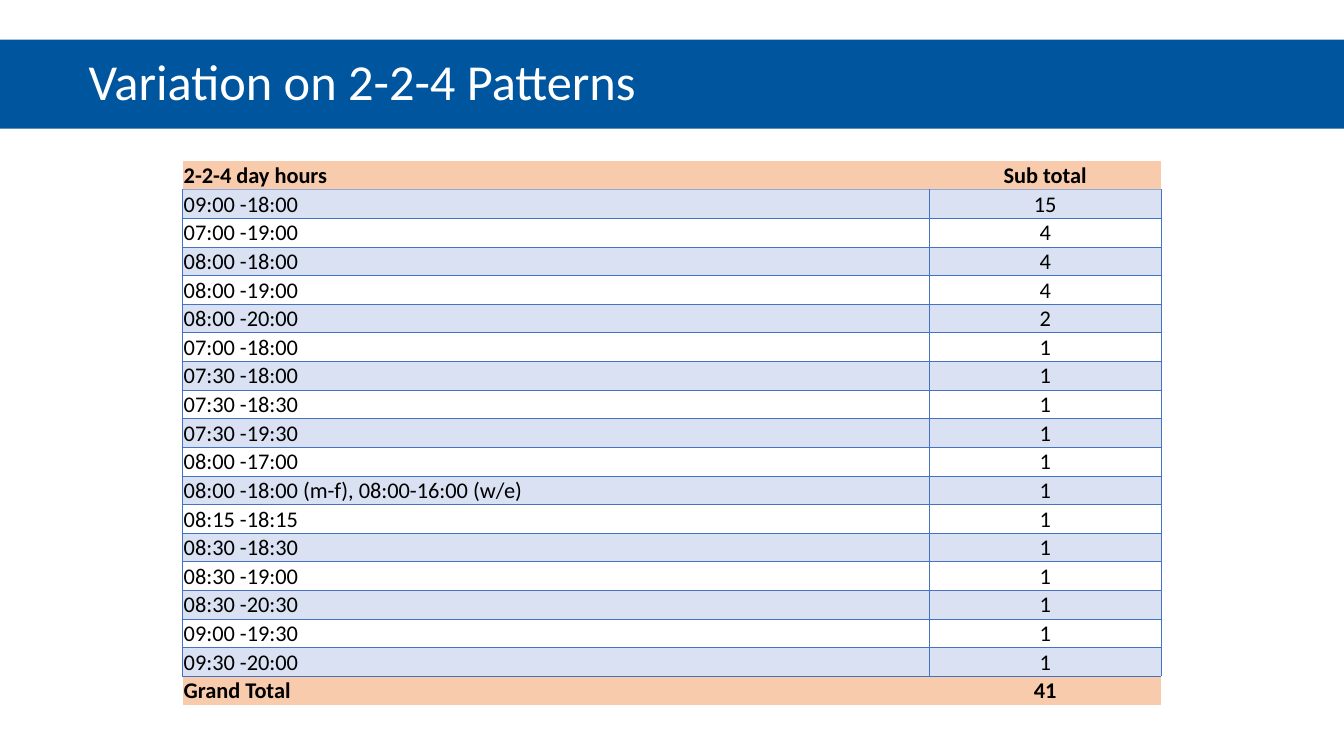
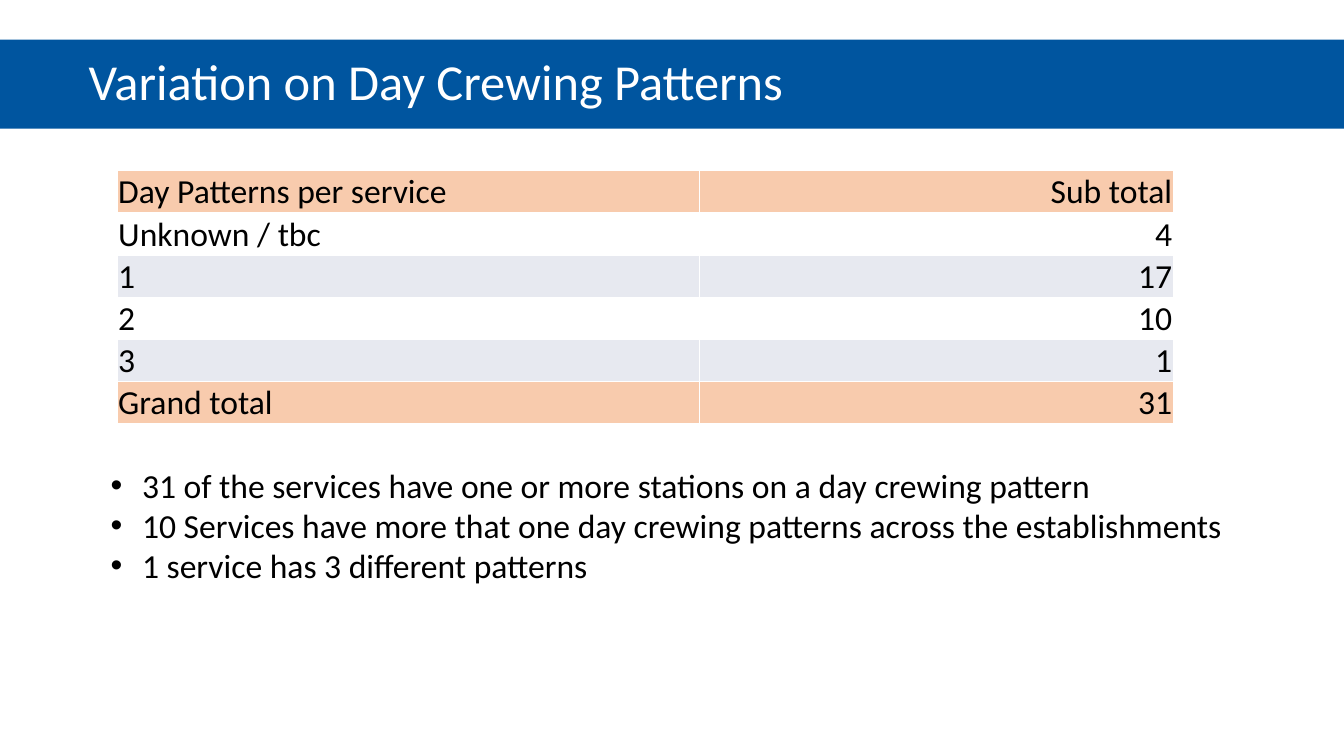
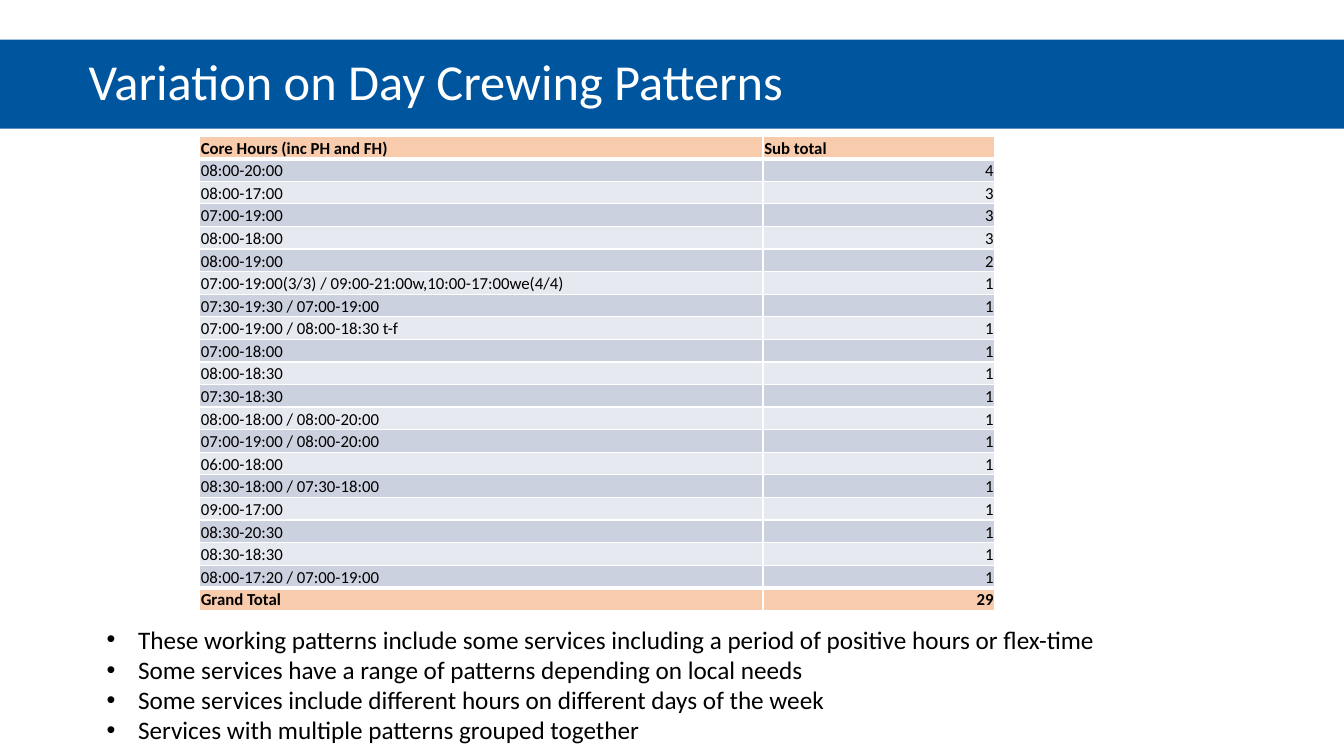
from lxml.etree import SubElement
from pptx import Presentation
from pptx.dml.color import RGBColor
from pptx.enum.text import MSO_ANCHOR as Anchor, MSO_AUTO_SIZE as AutoSize, PP_ALIGN as Align
from pptx.oxml.ns import qn
from pptx.util import Cm, Pt

# Shared look
FONT = "Calibri"
BLACK, WHITE, TITLE_BLUE, PEACH = "000000", "FFFFFF", "00559F", "F8CBAD"
PALE_BLUE, PALE_GREY, MID_GREY = "D9E1F2", "E7E9F0", "CCD1DF"
BLUE_LINE, SOFT_BLUE_LINE = ("4472C4", 0.5), ("8EA9DB", 0.5)
WHITE_LINE, THICK_WHITE_LINE = (WHITE, 1), (WHITE, 3)
SLIDE_WIDTH, SLIDE_HEIGHT = 33.87, 19.05
BULLET_INDENT = 0.79

# Content: the first row of each table is the header, the last the total
SLIDES = [
    {
        "title": "Variation on 2-2-4 Patterns",
        "table": {
            "rows": [
                ("2-2-4 day hours", "Sub total"),
                ("09:00 -18:00", 15),
                ("07:00 -19:00", 4),
                ("08:00 -18:00", 4),
                ("08:00 -19:00", 4),
                ("08:00 -20:00", 2),
                ("07:00 -18:00", 1),
                ("07:30 -18:00", 1),
                ("07:30 -18:30", 1),
                ("07:30 -19:30", 1),
                ("08:00 -17:00", 1),
                ("08:00 -18:00 (m-f), 08:00-16:00 (w/e)", 1),
                ("08:15 -18:15", 1),
                ("08:30 -18:30", 1),
                ("08:30 -19:00", 1),
                ("08:30 -20:30", 1),
                ("09:00 -19:30", 1),
                ("09:30 -20:00", 1),
                ("Grand Total", 41),
            ],
            "left": 4.6, "top": 4.06, "widths": (18.82, 5.84), "row_height": 0.69,
            "size": 16, "bold_ends": True, "bands": (PALE_BLUE, None),
            "header_align": Align.CENTER, "value_align": Align.CENTER,
            "grid": BLUE_LINE, "end_edge": None,
            "header_rule": SOFT_BLUE_LINE, "total_rule": BLUE_LINE,
        },
    },
    {
        "title": "Variation on Day Crewing Patterns",
        "table": {
            "rows": [
                ("Day Patterns per service", "Sub total"),
                ("Unknown / tbc", 4),
                ("1", 17),
                ("2", 10),
                ("3", 1),
                ("Grand total", 31),
            ],
            "left": 2.95, "top": 4.3, "widths": (14.68, 11.94), "row_height": 1.03,
            "size": 24, "bold_ends": False, "bands": (None, PALE_GREY),
            "header_align": Align.RIGHT, "value_align": Align.RIGHT,
            "grid": WHITE_LINE, "end_edge": WHITE_LINE,
            "header_rule": WHITE_LINE, "total_rule": WHITE_LINE,
        },
        "bullets": {
            "lines": [
                "31 of the services have one or more stations on a day crewing pattern",
                "10 Services have more that one day crewing patterns across the establishments",
                "1 service has 3 different patterns",
            ],
            "place": (2.54, 11.58, 28.8, 3.33), "size": 24,
        },
    },
    {
        "title": "Variation on Day Crewing Patterns",
        "table": {
            "rows": [
                ("Core Hours (inc PH and FH)", "Sub total"),
                ("08:00-20:00", 4),
                ("08:00-17:00", 3),
                ("07:00-19:00", 3),
                ("08:00-18:00", 3),
                ("08:00-19:00", 2),
                ("07:00-19:00(3/3) / 09:00-21:00w,10:00-17:00we(4/4)", 1),
                ("07:30-19:30 / 07:00-19:00", 1),
                ("07:00-19:00 / 08:00-18:30 t-f", 1),
                ("07:00-18:00", 1),
                ("08:00-18:30", 1),
                ("07:30-18:30", 1),
                ("08:00-18:00 / 08:00-20:00", 1),
                ("07:00-19:00 / 08:00-20:00", 1),
                ("06:00-18:00", 1),
                ("08:30-18:00 / 07:30-18:00", 1),
                ("09:00-17:00", 1),
                ("08:30-20:30", 1),
                ("08:30-18:30", 1),
                ("08:00-17:20 / 07:00-19:00", 1),
                ("Grand Total", 29),
            ],
            "left": 5.03, "top": 3.43, "widths": (14.2, 5.84), "row_height": 0.57,
            "size": 12, "bold_ends": True, "bands": (MID_GREY, PALE_GREY),
            "header_align": Align.LEFT, "value_align": Align.RIGHT,
            "grid": WHITE_LINE, "end_edge": WHITE_LINE,
            "header_rule": THICK_WHITE_LINE, "total_rule": THICK_WHITE_LINE,
        },
        "bullets": {
            "lines": [
                "These working patterns include some services including a period of positive hours or flex-time",
                "Some services have a range of patterns depending on local needs",
                "Some services include different hours on different days of the week",
                "Services with multiple patterns grouped together",
            ],
            "place": (2.44, 15.6, 25.76, 3.33), "size": 18,
        },
    },
]


def paint(fill, color):
    if color is None:
        fill.background()
    else:
        fill.solid()
        fill.fore_color.rgb = RGBColor.from_string(color)


def write(para, text, size, color=BLACK, bold=False, align=Align.LEFT, indent=0, bullet=False):
    """Fill a paragraph with formatted text; indent is in centimetres."""
    props = para._p.get_or_add_pPr()
    props.set("marL", str(Cm(indent)))
    props.set("indent", str(-Cm(indent) if bullet else 0))
    if bullet:
        SubElement(props, qn("a:buFont")).set("typeface", "Arial")
        SubElement(props, qn("a:buChar")).set("char", "•")
    para.alignment = align
    span = para.add_run()
    span.text = text
    span.font.name = FONT
    span.font.size = Pt(size)
    span.font.bold = bold
    span.font.color.rgb = RGBColor.from_string(color)


def place(shape, left, top, width, height):
    shape.left, shape.top, shape.width, shape.height = map(Cm, (left, top, width, height))


def add_title(page, text):
    title = page.shapes.title
    place(title, 0, 1, SLIDE_WIDTH, 2.24)
    paint(title.fill, TITLE_BLUE)
    frame = title.text_frame
    frame.auto_size = AutoSize.NONE
    frame.vertical_anchor = Anchor.MIDDLE
    para = frame.paragraphs[0]
    write(para, text, size=36, color=WHITE, indent=1.98)
    para.line_spacing = 0.9


def set_borders(cell, left, right, top, bottom):
    props = cell._tc.get_or_add_tcPr()
    for side, edge in zip("LRTB", (left, right, top, bottom)):
        line = SubElement(props, qn(f"a:ln{side}"))
        if edge is None:
            line.set("w", "0")
            SubElement(line, qn("a:noFill"))
        else:
            color, width = edge
            line.set("w", str(Pt(width)))
            SubElement(SubElement(line, qn("a:solidFill")), qn("a:srgbClr")).set("val", color)


def add_pattern_table(page, data):
    rows, widths = data["rows"], data["widths"]
    last = len(rows) - 1
    table = page.shapes.add_table(
        len(rows), len(widths), Cm(data["left"]), Cm(data["top"]),
        Cm(sum(widths)), Cm(data["row_height"] * len(rows))).table
    table.first_row = table.horz_banding = False
    for column, width in zip(table.columns, widths):
        column.width = Cm(width)

    for i, values in enumerate(rows):
        table.rows[i].height = Cm(data["row_height"])
        is_end = i in (0, last)
        color = PEACH if is_end else data["bands"][(i - 1) % 2]
        side = data["end_edge"] if is_end else data["grid"]
        # Rules above and below this row
        rules = {0: data["end_edge"], 1: data["header_rule"],
                 last: data["total_rule"], last + 1: data["end_edge"]}
        top, bottom = (rules.get(k, data["grid"]) for k in (i, i + 1))
        for j, value in enumerate(values):
            cell = table.cell(i, j)
            cell.margin_left = cell.margin_right = cell.margin_top = Cm(0.03)
            cell.margin_bottom = 0
            cell.vertical_anchor = Anchor.BOTTOM
            set_borders(cell, side, side, top, bottom)
            paint(cell.fill, color)
            value_align = data["value_align"] if i else data["header_align"]
            write(cell.text_frame.paragraphs[0], str(value), data["size"],
                  bold=is_end and data["bold_ends"],
                  align=value_align if j else Align.LEFT)


def add_bullets(page, data):
    box = page.shapes.add_textbox(*map(Cm, data["place"]))
    frame = box.text_frame
    frame.word_wrap = True
    for i, text in enumerate(data["lines"]):
        para = frame.add_paragraph() if i else frame.paragraphs[0]
        write(para, text, data["size"], indent=BULLET_INDENT, bullet=True)


def main():
    deck = Presentation()
    deck.slide_width, deck.slide_height = Cm(SLIDE_WIDTH), Cm(SLIDE_HEIGHT)
    for content in SLIDES:
        page = deck.slides.add_slide(deck.slide_layouts[5])
        add_title(page, content["title"])
        add_pattern_table(page, content["table"])
        if "bullets" in content:
            add_bullets(page, content["bullets"])
    deck.save("out.pptx")


if __name__ == "__main__":
    main()
